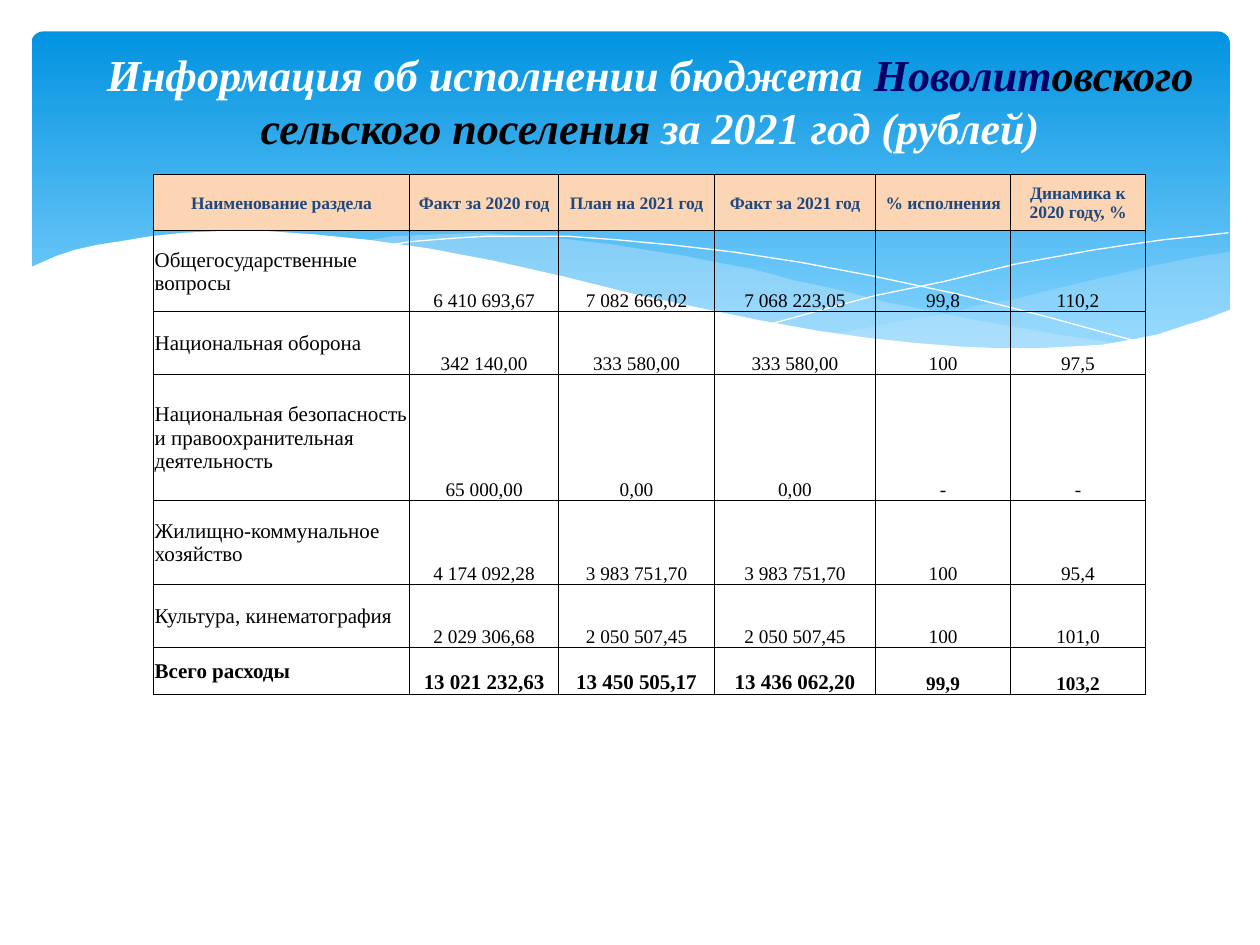
"""Build a budget execution slide with a wave header and a table."""
from pptx import Presentation
from pptx.dml.color import RGBColor
from pptx.enum.shapes import MSO_SHAPE
from pptx.enum.text import MSO_ANCHOR, MSO_AUTO_SIZE, PP_ALIGN
from pptx.oxml import parse_xml
from pptx.oxml.ns import nsdecls, qn
from pptx.util import Pt
from lxml.etree import SubElement

FONT = "Times New Roman"
HUES = {
    "sky": "0293E0", "pale": "83D3FE", "mist": "C6E7FC", "white": "FFFFFF",
    "black": "000000", "navy": "000066", "blue": "1F497D", "peach": "FCD5B5",
}


def add_run(para, text, size, hue, bold=False, italic=False):
    run = para.add_run()
    run.text = text
    font = run.font
    font.name, font.size, font.bold, font.italic = FONT, Pt(size), bold, italic
    font.color.rgb = RGBColor.from_string(HUES[hue])


def add_wave(points, hue=None, alpha=100):
    path = slide.shapes.build_freeform(*points[0], scale=Pt(1))
    path.add_line_segments(points[1:], close=hue is not None)
    wave = path.convert_to_shape()
    wave.shadow.inherit = False
    if hue is None:
        wave.fill.background()
        wave.line.color.rgb = RGBColor.from_string(HUES["white"])
        wave.line.width = Pt(0)
        return
    wave.line.fill.background()
    wave.fill.solid()
    wave.fill.fore_color.rgb = RGBColor.from_string(HUES[hue])
    if alpha < 100:
        tint = wave._element.spPr.find(qn("a:solidFill"))[0]
        SubElement(tint, qn("a:alpha")).set("val", str(alpha * 1000))


deck = Presentation()
deck.slide_width, deck.slide_height = Pt(720), Pt(540)
slide = deck.slides.add_slide(deck.slide_layouts[5])

panel = slide.shapes.add_shape(
    MSO_SHAPE.ROUNDED_RECTANGLE, Pt(18), Pt(18), Pt(684.7), Pt(194.4))
panel.adjustments[0] = 0.034
panel.shadow.inherit = False
panel.line.fill.background()
panel.fill.gradient()
panel.fill.gradient_angle = 270
for stop, place, hue in zip(panel.fill.gradient_stops, (0, 0.9), ("sky", "pale")):
    stop.position = place
    stop.color.rgb = RGBColor.from_string(HUES[hue])

right = [
    (702, 144), (682.6, 146.9), (663.1, 151.2), (641.5, 155.5), (619.9, 160.6),
    (599, 165.6), (579.6, 170.6), (560.9, 174.2), (542.2, 178.6), (508.3, 185),
    (475.9, 190.8), (497.5, 193.7), (517.7, 195.8), (536.4, 198), (553.7, 199.4),
    (586.1, 200.2), (614.9, 198.7), (640.1, 195.8), (663.1, 190.8), (683.3, 185),
    (702.7, 177.8), (702.7, 144),
]
middle = [
    (643, 196.6), (623.5, 193.7), (602.6, 190.8), (581, 187.2), (558, 182.9),
    (533.5, 177.8), (508.3, 172.8), (481, 166.3), (452.9, 159.8), (430.6, 154.1),
    (409.7, 149.8), (389.5, 146.2), (370.1, 142.6), (352.1, 139.7), (334.8, 137.5),
    (318.2, 136.1), (302.4, 134.6), (273.6, 133.2), (247.7, 133.9), (225.4, 135.4),
    (205.9, 137.5), (232.6, 141.1), (260.6, 146.2), (290.9, 151.9), (323.3, 159.8),
    (353.5, 167), (381.6, 172.8), (407.5, 178.6), (432.7, 183.6), (456.5, 187.9),
    (478.8, 191.5), (500.4, 194.4), (519.8, 197.3), (538.6, 198.7), (573.1, 200.2),
    (603.4, 200.2), (630.7, 198),
]
arch = [
    (222.5, 140.4), (236.2, 138.2), (247.7, 136.8), (261.4, 136.1), (278.6, 134.6),
    (299.5, 134.6), (324, 135.4), (352.1, 136.8), (383.8, 139.7), (419, 144),
    (457.9, 149.8), (500.4, 157.7), (547.2, 167.8), (598.3, 180.7), (653, 195.8),
]
rise = [
    (441.4, 185), (470.2, 177.1), (500.4, 169.2), (538.6, 160.6), (580.3, 151.2),
    (623.5, 143.3), (644.4, 139.7), (665.3, 136.8), (684.7, 134.6), (702, 133.2),
]
front = [
    (703.4, 177.1), (690.5, 182.2), (676.8, 186.5), (662.4, 190.8), (647.3, 193.7),
    (630, 196.6), (612, 198), (592.6, 199.4), (571, 198.7), (547.9, 198),
    (522.7, 195.8), (495.4, 193), (466.6, 188.6), (434.2, 182.9), (399.6, 176.4),
    (362.2, 167.8), (321.8, 158.4), (281.5, 149), (244.8, 141.8), (210.2, 136.8),
    (180, 133.9), (151.9, 132.5), (127.4, 132.5), (105.1, 133.2), (85.7, 134.6),
    (68.4, 137.5), (54.7, 140.4), (42.5, 143.3), (33.1, 146.2), (25.9, 149),
    (16.6, 153.4), (16.6, 236.9), (703.4, 236.9),
]
add_wave(right, "mist", 29)
add_wave(middle, "mist", 40)
add_wave(arch)
add_wave(rise)
add_wave(front, "white")

rows = [
    ("Наименование раздела", "Факт за 2020 год", "План на 2021 год",
     "Факт за 2021 год", "% исполнения", "Динамика к 2020 году, %"),
    ("Общегосударственные вопросы", "6 410 693,67", "7 082 666,02",
     "7 068 223,05", "99,8", "110,2"),
    ("Национальная оборона", "342 140,00", "333 580,00", "333 580,00", "100", "97,5"),
    ("Национальная безопасность и правоохранительная деятельность",
     "65 000,00", "0,00", "0,00", "-", "-"),
    ("Жилищно-коммунальное хозяйство", "4 174 092,28", "3 983 751,70",
     "3 983 751,70", "100", "95,4"),
    ("Культура, кинематография", "2 029 306,68", "2 050 507,45",
     "2 050 507,45", "100", "101,0"),
    ("Всего расходы", "13 021 232,63", "13 450 505,17", "13 436 062,20",
     "99,9", "103,2"),
]
widths = (146.3, 85.3, 88.9, 92.2, 77.1, 77.1)
heights = (32, 46.3, 36, 72, 48, 36, 26.8)
last = len(rows) - 1
grid = slide.shapes.add_table(
    len(rows), len(widths), Pt(87.7), Pt(99.8), Pt(sum(widths)), Pt(sum(heights))).table
grid.first_row = grid.horz_banding = False
for col, width in zip(grid.columns, widths):
    col.width = Pt(width)
for i, (row, height) in enumerate(zip(rows, heights)):
    grid.rows[i].height = Pt(height)
    for j, text in enumerate(row):
        cell = grid.cell(i, j)
        head, name = i == 0, j == 0
        cell.margin_left = cell.margin_right = cell.margin_top = Pt(0.7)
        cell.margin_bottom = Pt(0)
        cell.vertical_anchor = MSO_ANCHOR.MIDDLE if head or name else MSO_ANCHOR.BOTTOM
        para = cell.text_frame.paragraphs[0]
        para.alignment = PP_ALIGN.CENTER if head or not name else PP_ALIGN.LEFT
        size = 10 if head else 12 if name or (i == last and j < 4) else 11
        add_run(para, text, size, "blue" if head else "black", i in (0, last))
        props = cell._tc.get_or_add_tcPr()
        for side in ("lnL", "lnR", "lnT", "lnB"):
            props.append(parse_xml(
                f'<a:{side} {nsdecls("a")} w="6350"><a:solidFill>'
                f'<a:srgbClr val="{HUES["black"]}"/></a:solidFill></a:{side}>'))
        if head:
            cell.fill.solid()
            cell.fill.fore_color.rgb = RGBColor.from_string(HUES["peach"])
        else:
            cell.fill.background()

title = slide.shapes.title
slide.shapes._spTree.append(title._element)
title.left, title.top, title.width, title.height = Pt(48.2), Pt(20.9), Pt(646.6), Pt(73.4)
frame = title.text_frame
frame.word_wrap = True
frame.auto_size = MSO_AUTO_SIZE.NONE
frame.vertical_anchor = MSO_ANCHOR.MIDDLE
para = frame.paragraphs[0]
para.alignment = PP_ALIGN.CENTER
for text, hue in (
    ("Информация об исполнении бюджета ", "white"),
    ("Новолит", "navy"),
    ("овского сельского поселения ", "black"),
    ("за 2021 год (рублей)", "white"),
):
    add_run(para, text, 25.2, hue, True, True)

deck.save("out.pptx")
